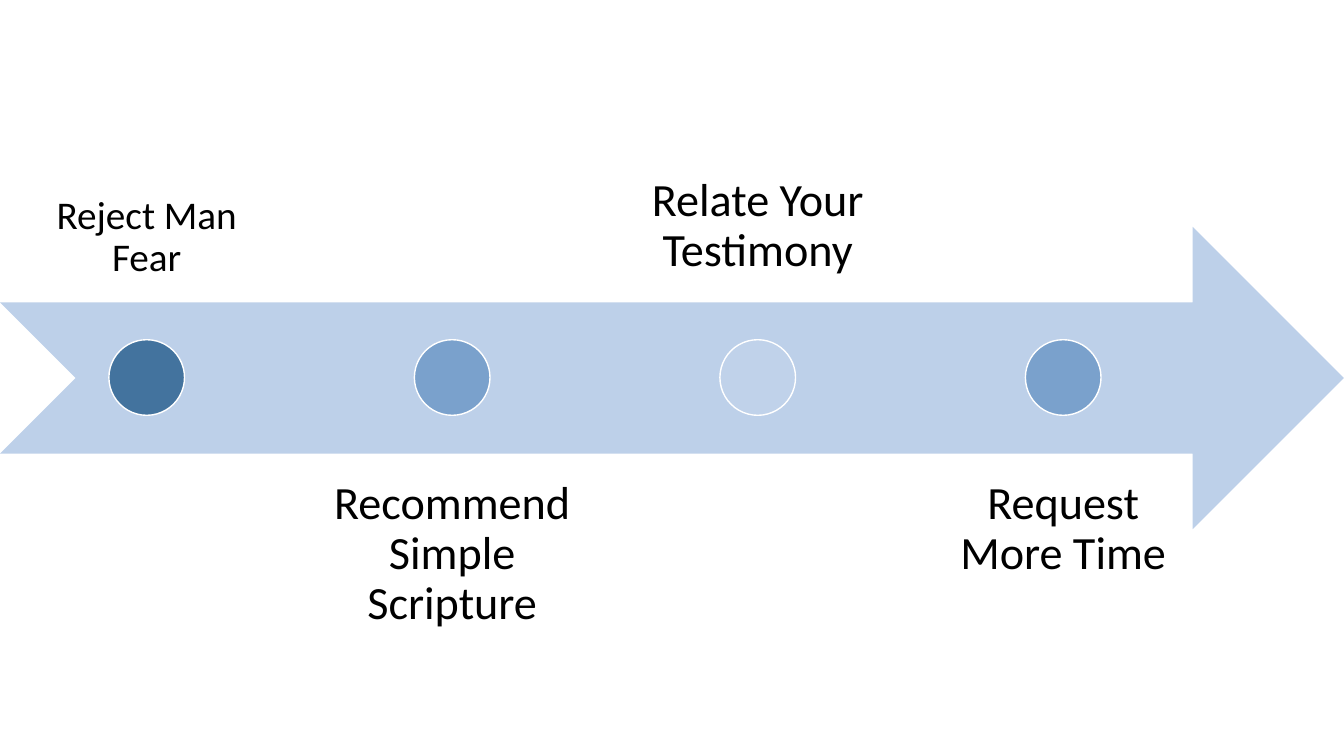
from pptx import Presentation
from pptx.dml.color import RGBColor
from pptx.enum.shapes import MSO_SHAPE
from pptx.enum.text import MSO_ANCHOR, PP_ALIGN
from pptx.util import Inches, Pt

ARROW = MSO_SHAPE.NOTCHED_RIGHT_ARROW
OVAL = MSO_SHAPE.OVAL
TOP, BOTTOM = MSO_ANCHOR.TOP, MSO_ANCHOR.BOTTOM
CENTER = PP_ALIGN.CENTER

COLORS = {
    "arrow": "BDD0E9",
    "dark": "43739E",
    "medium": "7AA1CC",
    "light": "C0D2EA",
    "outline": "FFFFFF",
    "text": "000000",
}

STEPS = [
    ("Reject Man Fear", "dark", 28, 0.22),
    ("Recommend Simple Scripture", "medium", 33, 0.26),
    ("Relate Your Testimony", "light", 33, 0.26),
    ("Request More Time", "medium", 33, 0.26),
]
FIRST_LEFT, STEP_PITCH = 0.01, 3.03
LABEL_WIDTH, LABEL_HEIGHT = 2.89, 3
DOT_SIZE, DOT_TOP = 0.75, 3.37


def color(name):
    return RGBColor.from_string(COLORS[name])


def add_filled(page, kind, left, top, width, height, fill):
    shape = page.shapes.add_shape(
        kind, Inches(left), Inches(top), Inches(width), Inches(height))
    shape.shadow.inherit = False
    shape.fill.solid()
    shape.fill.fore_color.rgb = color(fill)
    shape.line.fill.background()
    return shape


deck = Presentation()
deck.slide_width = Inches(13.33)
deck.slide_height = Inches(7.5)
page = deck.slides.add_slide(deck.slide_layouts[6])

add_filled(page, ARROW, 0, 2.25, 13.33, 3, "arrow")

for index, (label, fill, size, inset) in enumerate(STEPS):
    left = FIRST_LEFT + index * STEP_PITCH
    above = index % 2 == 0

    box = page.shapes.add_textbox(
        Inches(left), Inches(0 if above else 4.5),
        Inches(LABEL_WIDTH), Inches(LABEL_HEIGHT))
    frame = box.text_frame
    frame.word_wrap = True
    frame.vertical_anchor = BOTTOM if above else TOP
    frame.margin_left = frame.margin_right = Inches(inset)
    frame.margin_top = frame.margin_bottom = Inches(inset)
    para = frame.paragraphs[0]
    para.text = label
    para.alignment = CENTER
    para.line_spacing = 0.9
    para.font.name = "Calibri"
    para.font.size = Pt(size)
    para.font.color.rgb = color("text")

    dot_left = left + (LABEL_WIDTH - DOT_SIZE) / 2
    dot = add_filled(page, OVAL, dot_left, DOT_TOP, DOT_SIZE, DOT_SIZE, fill)
    dot.line.color.rgb = color("outline")
    dot.line.width = Pt(1)

deck.save("out.pptx")
